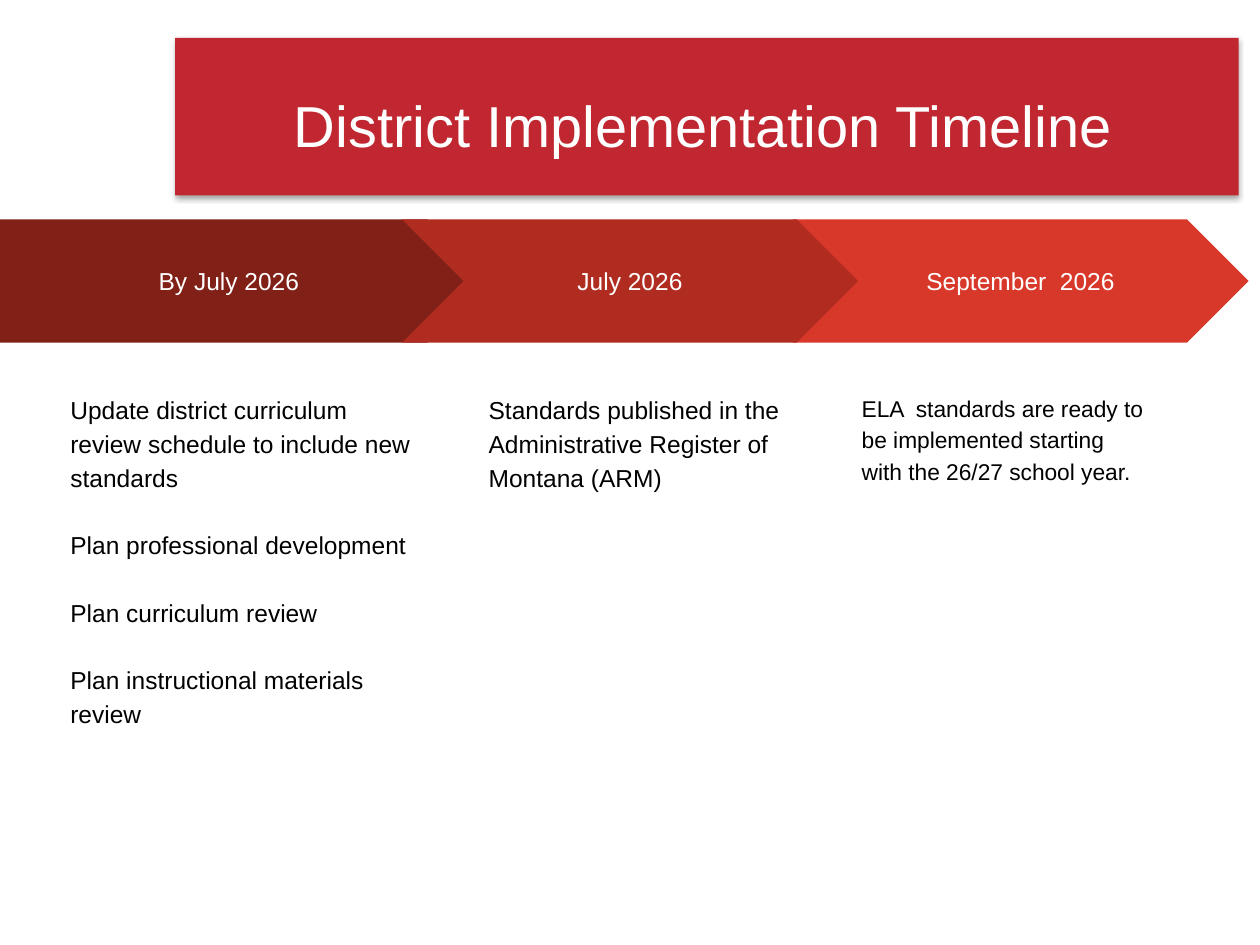
from lxml.etree import SubElement
from pptx import Presentation
from pptx.dml.color import RGBColor
from pptx.enum.shapes import MSO_SHAPE
from pptx.enum.text import MSO_ANCHOR, PP_ALIGN
from pptx.oxml.ns import qn
from pptx.util import Inches, Pt

WHITE = RGBColor(0xFF, 0xFF, 0xFF)
BLACK = RGBColor(0x00, 0x00, 0x00)
BANNER_RED = RGBColor(0xC1, 0x27, 0x30)
DARK_RED = RGBColor(0x80, 0x20, 0x17)
MIDDLE_RED = RGBColor(0xB0, 0x2C, 0x20)
BRIGHT_RED = RGBColor(0xD8, 0x38, 0x29)

FONT_NAME = "Arial"
ARROW_TOP, ARROW_HEIGHT = 1.74, 0.98
DETAIL_TOP, DETAIL_HEIGHT = 3, 3.81
PARAGRAPH_GAP = Pt(19.3)

STAGES = [
    ("September  2026", MSO_SHAPE.CHEVRON, 6.29, 3.62, BRIGHT_RED, 6.74, 2.45, 13,
     ["ELA  standards are ready to be implemented starting with the 26/27 school year."]),
    ("By July 2026", MSO_SHAPE.PENTAGON, 0, 3.88, DARK_RED, 0.46, 2.92, 14,
     ["Update district curriculum review schedule to include new standards",
      "Plan professional development",
      "Plan curriculum review",
      "Plan instructional materials review"]),
    ("July 2026", MSO_SHAPE.CHEVRON, 3.19, 3.62, MIDDLE_RED, 3.78, 2.57, 14,
     ["Standards published in the Administrative Register of Montana (ARM)"]),
]


def set_frame(shape, anchor, vertical_margin=0.1):
    """Wrap the text of a shape and set its anchor and margins."""
    frame = shape.text_frame
    frame.word_wrap = True
    frame.vertical_anchor = anchor
    frame.margin_left = frame.margin_right = Inches(0.1)
    frame.margin_top = frame.margin_bottom = Inches(vertical_margin)
    return frame


def write(paragraph, text, size, color, alignment):
    """Fill a paragraph with text in one style."""
    paragraph.text = text
    paragraph.alignment = alignment
    paragraph.font.name = FONT_NAME
    paragraph.font.size = Pt(size)
    paragraph.font.color.rgb = color


def add_block(slide, kind, left, top, width, height, color):
    """Add a filled shape without line or shadow."""
    shape = slide.shapes.add_shape(
        kind, Inches(left), Inches(top), Inches(width), Inches(height))
    shape.shadow.inherit = False
    shape.fill.solid()
    shape.fill.fore_color.rgb = color
    shape.line.fill.background()
    return shape


def add_soft_shadow(shape):
    """Give a shape a soft shadow that falls straight down."""
    effects = shape.element.spPr.find(qn("a:effectLst"))
    shadow = SubElement(effects, qn("a:outerShdw"), blurRad=str(Pt(3.1)),
                        dist=str(Pt(1.8)), dir="5400000", rotWithShape="0")
    color = SubElement(shadow, qn("a:srgbClr"), val="000000")
    SubElement(color, qn("a:alpha"), val="34000")


def add_title(slide, text):
    """Add the red banner and the title over it."""
    banner = add_block(slide, MSO_SHAPE.RECTANGLE, 1.39, 0.3, 8.44, 1.25, BANNER_RED)
    add_soft_shadow(banner)
    box = slide.shapes.add_textbox(Inches(1.36), Inches(0.36), Inches(8.44), Inches(1.25))
    frame = set_frame(box, MSO_ANCHOR.MIDDLE, 0.05)
    write(frame.paragraphs[0], text, 33, WHITE, PP_ALIGN.CENTER)


def add_arrow(slide, label, kind, left, width, color):
    """Add one labelled arrow of the timeline."""
    arrow = add_block(slide, kind, left, ARROW_TOP, width, ARROW_HEIGHT, color)
    arrow.adjustments[0] = 0.5
    frame = set_frame(arrow, MSO_ANCHOR.MIDDLE)
    write(frame.paragraphs[0], label, 14, WHITE, PP_ALIGN.CENTER)


def add_details(slide, left, width, size, items):
    """Add the column of text below an arrow."""
    box = slide.shapes.add_textbox(
        Inches(left), Inches(DETAIL_TOP), Inches(width), Inches(DETAIL_HEIGHT))
    frame = set_frame(box, MSO_ANCHOR.TOP)
    for index, item in enumerate(items):
        paragraph = frame.add_paragraph() if index else frame.paragraphs[0]
        write(paragraph, item, size, BLACK, PP_ALIGN.LEFT)
        paragraph.line_spacing = 1.15
        if index:
            paragraph.space_before = PARAGRAPH_GAP


def main():
    """Build the timeline slide and save it."""
    presentation = Presentation()
    presentation.slide_width = Inches(10)
    presentation.slide_height = Inches(7.5)
    slide = presentation.slides.add_slide(presentation.slide_layouts[6])
    add_title(slide, "District Implementation Timeline")
    for label, kind, left, width, color, text_left, text_width, size, items in STAGES:
        add_arrow(slide, label, kind, left, width, color)
        add_details(slide, text_left, text_width, size, items)
    presentation.save("out.pptx")


if __name__ == "__main__":
    main()
